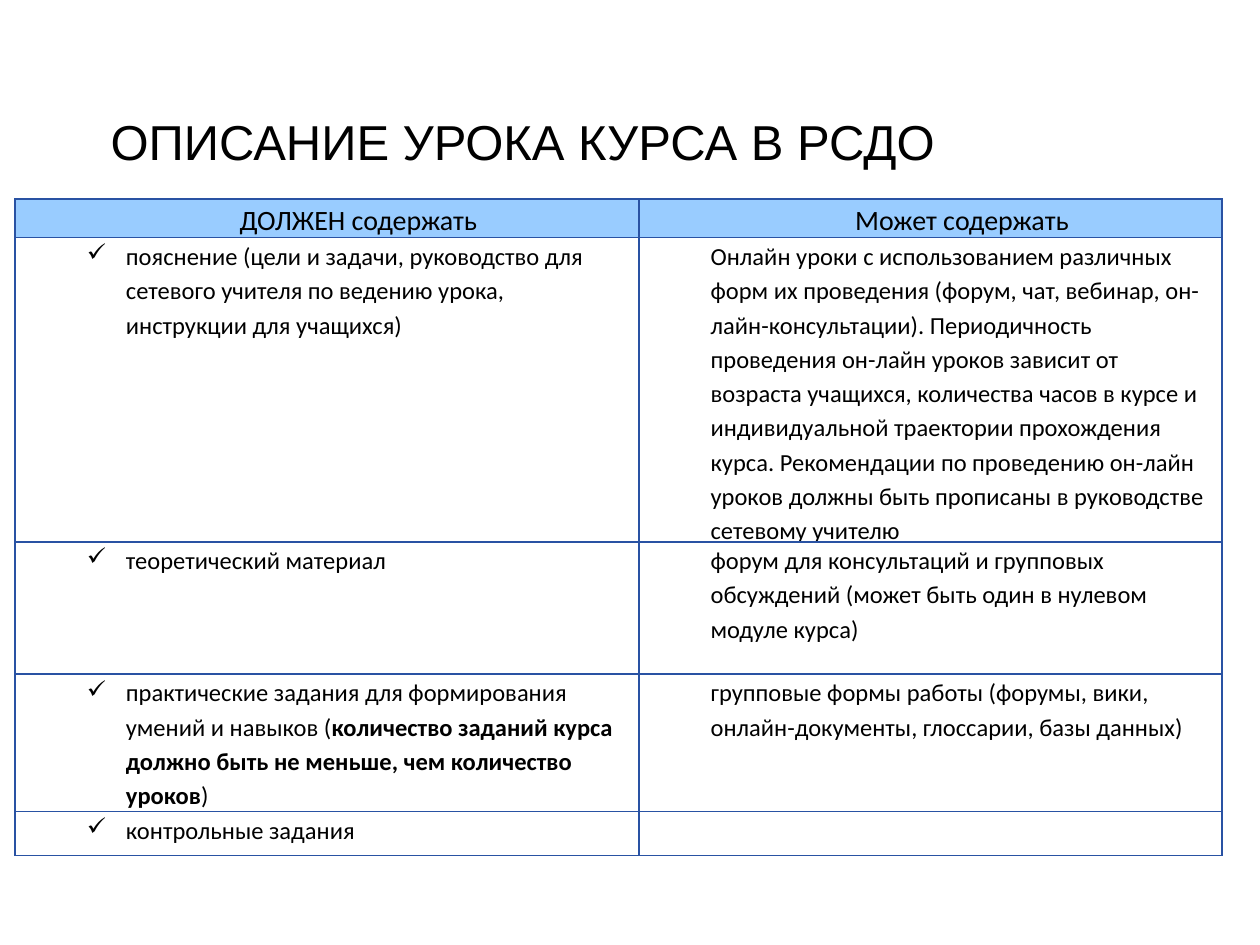
from dataclasses import dataclass

from lxml.etree import SubElement
from pptx import Presentation
from pptx.dml.color import RGBColor
from pptx.enum.text import MSO_ANCHOR, PP_ALIGN
from pptx.oxml.ns import qn
from pptx.util import Inches, Pt


@dataclass(frozen=True)
class Theme:
    text: RGBColor = RGBColor.from_string("000000")
    header_fill: RGBColor = RGBColor.from_string("99CCFF")
    border: str = "2952A3"
    border_width: int = Pt(1)
    title_font: str = "Arial"
    table_font: str = "Calibri"
    title_size: int = Pt(28)
    header_size: int = Pt(16)
    body_size: int = Pt(14)


THEME = Theme()
TITLE = "ОПИСАНИЕ УРОКА КУРСА В РСДО"
HEADERS = ("ДОЛЖЕН содержать", "Может содержать")
LESSON_PARTS = (
    (
        ("пояснение (цели и задачи, руководство для сетевого учителя по ведению урока, "
         "инструкции для учащихся)",),
        ("Онлайн уроки с использованием различных форм их проведения (форум, чат, вебинар, "
         "он-лайн-консультации). Периодичность проведения он-лайн уроков зависит от возраста "
         "учащихся, количества часов в курсе и индивидуальной траектории прохождения курса. "
         "Рекомендации по проведению он-лайн уроков должны быть прописаны в руководстве "
         "сетевому учителю",),
    ),
    (
        ("теоретический материал",),
        ("форум для консультаций и групповых обсуждений (может быть один в нулевом модуле курса)",),
    ),
    (
        ("практические задания для формирования умений и навыков (",
         "количество заданий курса должно быть не меньше, чем количество уроков",
         ")"),
        ("групповые формы работы (форумы, вики, онлайн-документы, глоссарии, базы данных)",),
    ),
    (("контрольные задания",), ()),
)
COLUMN_WIDTHS = (4.95, 4.63)
ROW_HEIGHTS = (0.3, 2.24, 1.05, 1.09, 0.35)


def apply_format(target, values):
    for name, value in values.items():
        setattr(target, name, value)


def add_run(paragraph, text, font, size, bold=False):
    run = paragraph.add_run()
    run.text = text
    apply_format(run.font, {"name": font, "size": size, "bold": bold})
    run.font.color.rgb = THEME.text


def add_title(slide):
    title = slide.shapes.add_textbox(Inches(0.78), Inches(0.72), Inches(9.05), Inches(0.86))
    apply_format(title.text_frame, {"word_wrap": True, "vertical_anchor": MSO_ANCHOR.MIDDLE})
    paragraph = title.text_frame.paragraphs[0]
    paragraph.line_spacing = 0.9
    add_run(paragraph, TITLE, THEME.title_font, THEME.title_size)


def indent_paragraph(paragraph, left, first_line=0, bullet=None):
    properties = paragraph._p.get_or_add_pPr()
    properties.set("marL", str(Inches(left)))
    properties.set("indent", str(Inches(first_line)))
    if bullet:
        SubElement(properties, qn("a:buChar"), char=bullet)


def style_cell(cell):
    apply_format(cell, {"margin_left": Inches(0.07), "margin_right": Inches(0.07),
                        "margin_top": 0, "margin_bottom": 0})
    properties = cell._tc.get_or_add_tcPr()
    for side in ("a:lnL", "a:lnR", "a:lnT", "a:lnB"):
        line = SubElement(properties, qn(side), w=str(THEME.border_width))
        fill = SubElement(line, qn("a:solidFill"))
        SubElement(fill, qn("a:srgbClr"), val=THEME.border)
    cell.fill.background()


def fill_header(cell, text):
    style_cell(cell)
    cell.vertical_anchor = MSO_ANCHOR.MIDDLE
    cell.fill.solid()
    cell.fill.fore_color.rgb = THEME.header_fill
    paragraph = cell.text_frame.paragraphs[0]
    indent_paragraph(paragraph, 0.5)
    apply_format(paragraph, {"alignment": PP_ALIGN.CENTER, "line_spacing": 1.15})
    add_run(paragraph, text, THEME.table_font, THEME.header_size)


def fill_body(cell, phrases, required):
    style_cell(cell)
    if not phrases:
        return
    paragraph = cell.text_frame.paragraphs[0]
    if required:
        indent_paragraph(paragraph, 0.81, -0.31, "✓")
    else:
        indent_paragraph(paragraph, 0.5)
    paragraph.line_spacing = 1.15
    for index, phrase in enumerate(phrases):
        add_run(paragraph, phrase, THEME.table_font, THEME.body_size, bold=index == 1)


def add_lesson_table(slide):
    table = slide.shapes.add_table(
        len(ROW_HEIGHTS), len(COLUMN_WIDTHS), Inches(0.12), Inches(1.58),
        Inches(sum(COLUMN_WIDTHS)), Inches(sum(ROW_HEIGHTS))).table
    apply_format(table, {"first_row": False, "horz_banding": False})
    for column, width in zip(table.columns, COLUMN_WIDTHS):
        column.width = Inches(width)
    for row, height in zip(table.rows, ROW_HEIGHTS):
        row.height = Inches(height)
    for index, header in enumerate(HEADERS):
        fill_header(table.cell(0, index), header)
    for row_index, (required, optional) in enumerate(LESSON_PARTS, start=1):
        fill_body(table.cell(row_index, 0), required, True)
        fill_body(table.cell(row_index, 1), optional, False)


def main():
    presentation = Presentation()
    apply_format(presentation, {"slide_width": Inches(10), "slide_height": Inches(7.5)})
    slide = presentation.slides.add_slide(presentation.slide_layouts[6])
    add_title(slide)
    add_lesson_table(slide)
    presentation.save("out.pptx")


if __name__ == "__main__":
    main()
